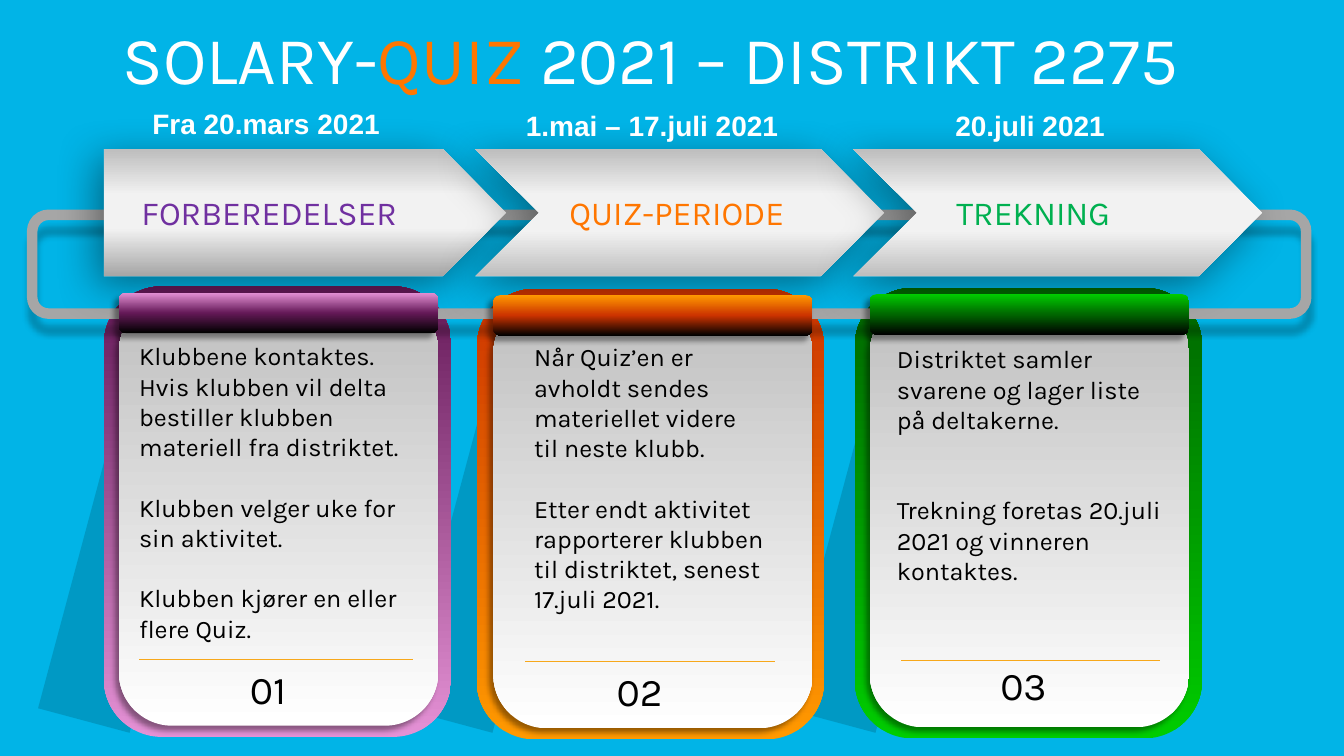
from dataclasses import dataclass

from lxml import etree
from pptx import Presentation
from pptx import util as u
from pptx.dml.color import RGBColor
from pptx.enum import shapes, text
from pptx.oxml.ns import qn

WHITE, BLACK, ORANGE = "FFFFFF", "000000", "FF7600"
CARD_WIDTH, PANEL_WIDTH = 248, 228
ARROW_TOP, ARROW_HEIGHT = 106.5, 91
LINE = 21.6  # height of one line of body text

Box = tuple[float, float, float, float]
Stops = list[tuple[int, str]]


@dataclass(frozen=True)
class Stage:
    date: str
    date_box: Box
    label: str
    label_left: float
    label_color: str
    arrow: shapes.MSO_SHAPE
    arrow_left: float
    arrow_width: float
    arrow_base: str
    arrow_bottom: Stops
    lean_left: float
    card_left: float
    panel_left: float
    panel_top: float
    light: str
    dark: str
    body: list[tuple[float, str]]  # space before, text
    body_box: Box
    rule: tuple[float, float, float]  # from x, to x, y
    number: str
    number_at: tuple[float, float]


SILVER = [(28, "F2F2F2"), (98, "BFBFBF")]
STAGES = [
    Stage("Fra 20.mars 2021", (74.2, 72.7, 231.8, 31.7), "FORBEREDELSER", 94, "7030A0",
          shapes.MSO_SHAPE.PENTAGON, 74.2, 287.3, "D9D9D9", [(24, "F2F2F2"), (99, "A6A6A6")],
          -53.3, 74.2, 85, 213.1, "E491D5", "651958",
          [(0, "Klubbene kontaktes."),
           (0, "Hvis klubben vil delta bestiller klubben materiell fra distriktet."),
           (LINE, "Klubben velger uke for sin aktivitet."),
           (LINE, "Klubben kjører en eller flere Quiz.")],
          (92.2, 239.8, 219.6, 254), (99.4, 295.2, 470.9), "01", (171.4, 471.6)),
    Stage("1.mai – 17.juli 2021", (342, 74.2, 247.7, 31.7), "QUIZ-PERIODE", 399.6, ORANGE,
          shapes.MSO_SHAPE.CHEVRON, 339.5, 292, "F2F2F2", SILVER,
          205.9, 340.6, 352.4, 214.9, "FF9900", "CC3300",
          [(0, "Når Quiz’en er avholdt sendes materiellet videre til neste klubb."),
           (LINE, "Etter endt aktivitet rapporterer klubben til distriktet, senest 17.juli 2021.")],
          (374.4, 240.5, 179.3, 211), (375.1, 553.7, 472.3), "02", (433.4, 473)),
    Stage("20.juli 2021", (612, 74.2, 247.7, 31.7), "TREKNING", 676.1, "00B050",
          shapes.MSO_SHAPE.CHEVRON, 609.5, 292, "F2F2F2", SILVER,
          479.5, 610.6, 621.3, 214.2, "00CC00", "006600",
          [(0, "Distriktet samler svarene og lager liste på deltakerne."),
           (2 * LINE, "Trekning foretas 20.juli 2021 og vinneren kontaktes.")],
          (633.6, 241.9, 208, 189.4), (643.7, 828.7, 471.6), "03", (707.4, 469.1)),
]


def rgb(value: str) -> RGBColor:
    return RGBColor.from_string(value)


def solid(shape, color: str, opacity: int = 100) -> None:
    shape.fill.solid()
    shape.fill.fore_color.rgb = rgb(color)
    if opacity < 100:
        fill_color = shape._element.spPr.find(".//" + qn("a:srgbClr"))
        etree.SubElement(fill_color, qn("a:alpha")).set("val", str(opacity * 1000))


def gradient(shape, stops: Stops, upward: bool) -> None:
    shape.fill.gradient()
    shape.fill.gradient_angle = 90 if upward else 270
    stop_list = shape._element.spPr.find(".//" + qn("a:gsLst"))
    for old in list(stop_list):
        stop_list.remove(old)
    for position, color in stops:
        stop = etree.SubElement(stop_list, qn("a:gs"), pos=str(position * 1000))
        etree.SubElement(stop, qn("a:srgbClr"), val=color)


def plain(shape):
    """Remove the outline and the theme shadow."""
    shape.shadow.inherit = False
    shape.line.fill.background()
    return shape


def cast_shadow(shape, opacity: int, blur: float, distance: float, angle: int) -> None:
    effects = shape._element.spPr.find(qn("a:effectLst"))
    outer = etree.SubElement(effects, qn("a:outerShdw"), blurRad=str(u.Pt(blur)),
                             dist=str(u.Pt(distance)), dir=str(angle * 60000),
                             algn="ctr", rotWithShape="0")
    color = etree.SubElement(outer, qn("a:srgbClr"), val=BLACK)
    etree.SubElement(color, qn("a:alpha"), val=str(opacity * 1000))


def add_preset(slide, kind: shapes.MSO_SHAPE, box: Box):
    return plain(slide.shapes.add_shape(kind, *map(u.Pt, box)))


def add_text(slide, box: Box, paragraphs: list[tuple[float, str]], *, size: float,
             color: str = BLACK, font: str = "Karla", bold: bool = False,
             centered: bool = False, accent: str = "", accent_color: str = ORANGE) -> None:
    frame = slide.shapes.add_textbox(*map(u.Pt, box)).text_frame
    frame.word_wrap = True
    for index, (space, words) in enumerate(paragraphs):
        paragraph = frame.add_paragraph() if index else frame.paragraphs[0]
        paragraph.space_before = u.Pt(space)
        paragraph.alignment = text.PP_ALIGN.CENTER if centered else text.PP_ALIGN.LEFT
        for part in words.partition(accent) if accent else [words]:
            run = paragraph.add_run()
            run.text = part
            run.font.name, run.font.size, run.font.bold = font, u.Pt(size), bold
            run.font.color.rgb = rgb(accent_color if part == accent else color)


def add_arrow(slide, stage: Stage) -> None:
    left, width = stage.arrow_left, stage.arrow_width
    base = add_preset(slide, stage.arrow, (left, ARROW_TOP, width, ARROW_HEIGHT))
    solid(base, stage.arrow_base)
    cast_shadow(base, 40, 30, 9, 135)
    middle, right = ARROW_TOP + ARROW_HEIGHT / 2, left + width
    point = ARROW_HEIGHT / 2
    notch = left + (point if stage.arrow == shapes.MSO_SHAPE.CHEVRON else 0)
    halves = [(ARROW_TOP, SILVER, True), (ARROW_TOP + ARROW_HEIGHT, stage.arrow_bottom, False)]
    for edge, stops, upward in halves:
        outline = slide.shapes.build_freeform(u.Pt(notch), u.Pt(middle))
        corners = [(left, edge), (right - point, edge), (right, middle)]
        outline.add_line_segments([(u.Pt(x), u.Pt(y)) for x, y in corners], close=True)
        gradient(plain(outline.convert_to_shape()), stops, upward)


def add_panel(slide, stage: Stage) -> None:
    """Draw the pale sheet with its body text, rule, number and top roller."""
    rounded = shapes.MSO_SHAPE.ROUNDED_RECTANGLE
    left, top = stage.panel_left, stage.panel_top
    sheet = add_preset(slide, rounded, (left, top, PANEL_WIDTH, 305.3))
    gradient(sheet, [(0, WHITE), (100, "BFBFBF")], upward=True)
    cast_shadow(sheet, 40, 4, 4, 135)
    add_text(slide, (*stage.number_at, 64, 41), [(0, stage.number)], size=28)
    start, end, y = stage.rule
    rule = slide.shapes.add_connector(shapes.MSO_CONNECTOR.STRAIGHT,
                                      *map(u.Pt, (start, y, end, y)))
    rule.line.color.rgb = rgb("F7A81B")
    rule.line.width = u.Pt(0.5)
    etree.SubElement(rule._element.spPr, qn("a:effectLst"))
    add_text(slide, stage.body_box, stage.body, size=18)
    roller = add_preset(slide, rounded, (left, top - 4, PANEL_WIDTH, 28.8))
    gradient(roller, [(0, stage.light), (50, stage.dark), (100, BLACK)], upward=False)
    cast_shadow(roller, 40, 4, 5, 135)


def main() -> None:
    presentation = Presentation()
    presentation.slide_width, presentation.slide_height = u.Pt(960), u.Pt(540)
    slide = presentation.slides.add_slide(presentation.slide_layouts[6])
    slide.background.fill.solid()
    slide.background.fill.fore_color.rgb = rgb("01B4E7")

    for stage in STAGES:
        lean = add_preset(slide, shapes.MSO_SHAPE.RECTANGLE,
                          (stage.lean_left, 333.4, 305.3, 67.7))
        lean.rotation = 105
        solid(lean, BLACK, opacity=15)
    for stage in STAGES:
        card = add_preset(slide, shapes.MSO_SHAPE.ROUNDED_RECTANGLE,
                          (stage.card_left, stage.panel_top - 8.5, CARD_WIDTH, 321.8))
        gradient(card, [(0, stage.light), (100, stage.dark)], upward=True)

    ring = add_preset(slide, shapes.MSO_SHAPE.ROUNDED_RECTANGLE, (23, 153.4, 910, 70.6))
    ring.fill.background()
    ring.line.color.rgb = rgb("A6A6A6")
    ring.line.width = u.Pt(7.5)
    cast_shadow(ring, 22, 4, 11, 90)

    for stage in STAGES:
        add_arrow(slide, stage)
        add_text(slide, stage.date_box, [(0, stage.date)], size=20, color=WHITE,
                 font="Arial", bold=True, centered=True)
        add_text(slide, (stage.label_left, 133.2, 210, 36), [(0, stage.label)], size=24,
                 color=stage.label_color)
    for stage in STAGES:
        add_panel(slide, stage)
    add_text(slide, (28.1, 8.6, 873.4, 65.5), [(0, "SOLARY-QUIZ 2021 – DISTRIKT 2275")],
             size=48, color=WHITE, centered=True, accent="QUIZ")
    presentation.save("out.pptx")


if __name__ == "__main__":
    main()
